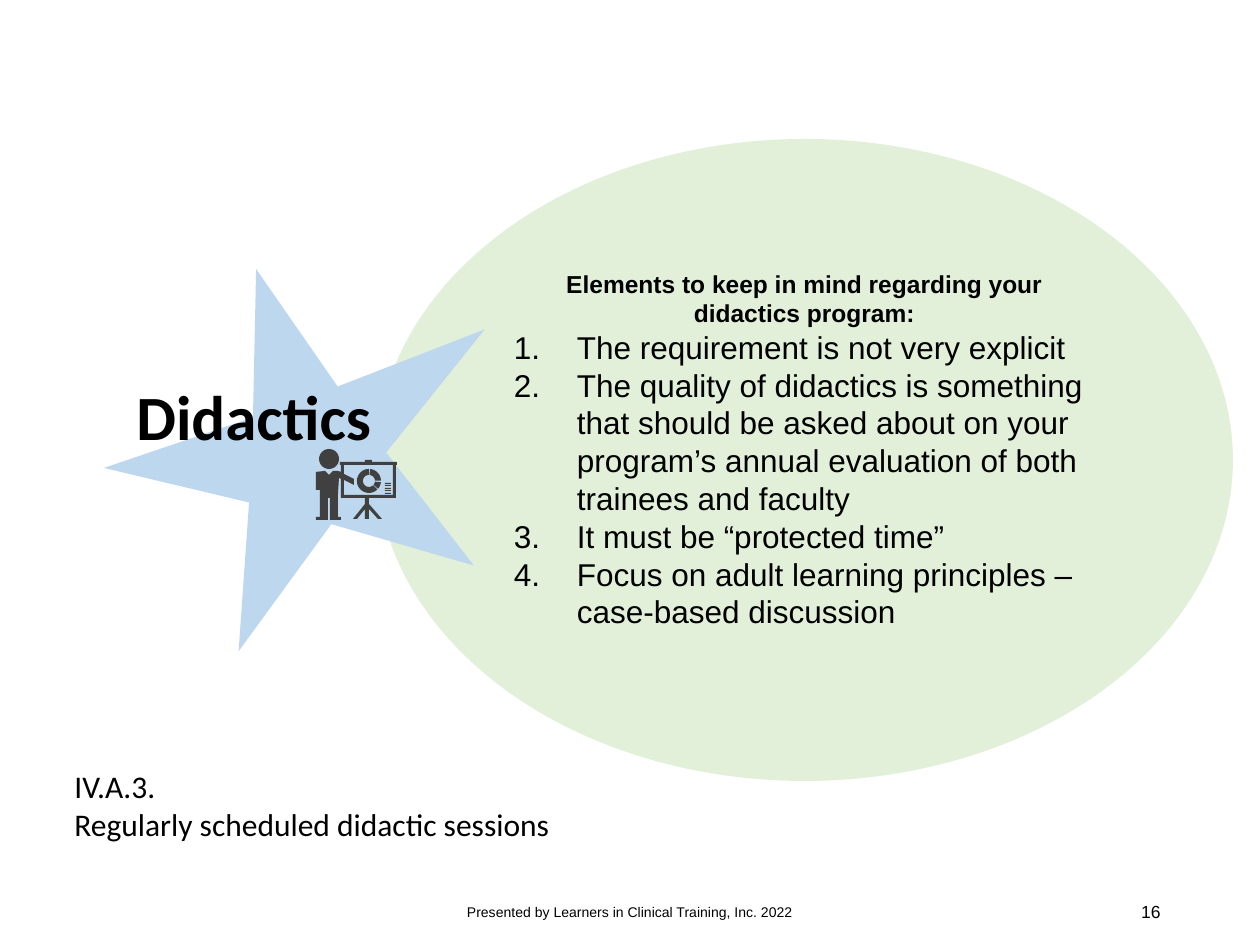
from math import cos, radians, sin

from lxml.etree import SubElement
from pptx import Presentation
from pptx.dml.color import RGBColor
from pptx.enum.shapes import MSO_SHAPE as Shape
from pptx.enum.text import MSO_ANCHOR as Anchor, MSO_AUTO_SIZE as AutoSize, PP_ALIGN as Align
from pptx.oxml.ns import qn
from pptx.util import Pt

EMU_PER_INCH, PX_PER_INCH = 914400, 126
BLACK = RGBColor(0x00, 0x00, 0x00)
PALE_GREEN = RGBColor(0xE2, 0xF0, 0xD9)
PALE_BLUE = RGBColor(0xBD, 0xD7, 0xEE)
CHARCOAL = RGBColor(0x40, 0x40, 0x40)

HEADING = "Elements to keep in mind regarding your didactics program:"
ELEMENTS = [
    "The requirement is not very explicit",
    "The quality of didactics is something that should be asked about on your "
    "program’s annual evaluation of both trainees and faculty",
    "It must be “protected time”",
    "Focus on adult learning principles – case-based discussion",
]
TEACHER_AND_EASEL = [
    (396, 462), (372, 462), (372, 460), (365, 460), (365, 462), (340, 462),
    (340, 465), (341, 465), (341, 472), (338, 471), (333, 471), (329, 475),
    (325, 471), (316, 472), (316, 490), (320, 490), (320, 517), (316, 517),
    (316, 520), (328, 520), (328, 498), (330, 498), (330, 520), (341, 520),
    (341, 517), (338, 517), (338, 494), (339, 478), (341, 479), (341, 498),
    (365, 498), (365, 504), (353, 519), (357, 519), (365, 509), (365, 519),
    (369, 519), (369, 509), (378, 519), (382, 519), (369, 504), (369, 498),
    (396, 498), (396, 465), (397, 465), (397, 462),
]
BOARD_OPENING = [
    (393, 495), (344, 495), (344, 480), (354, 485), (354, 479), (344, 474),
    (344, 465), (393, 465),
]
RING_CENTER = (369, 481)
RING_PARTS = [(45, 270), (275, 358), (6, 40)]


def px(length):
    """Turn pixels into EMU."""
    return round(length * EMU_PER_INCH / PX_PER_INCH)


def paint(shape, color):
    """Give a shape a flat fill without outline or shadow."""
    shape.shadow.inherit = False
    shape.fill.solid()
    shape.fill.fore_color.rgb = color
    shape.line.fill.background()


def add_preset(shapes, kind, bounds, color):
    """Add a flat preset shape."""
    shape = shapes.add_shape(kind, *map(px, bounds))
    paint(shape, color)
    return shape


def add_outline(shapes, contours, color):
    """Add a flat freeform made of closed contours."""
    first, *others = [[(px(x), px(y)) for x, y in contour] for contour in contours]
    builder = shapes.build_freeform(*first[0], scale=1.0)
    builder.add_line_segments(first[1:], close=True)
    for contour in others:
        builder.move_to(*contour[0])
        builder.add_line_segments(contour[1:], close=True)
    paint(builder.convert_to_shape(), color)


def arc(radius, start, end):
    """Return points along an arc around the ring center."""
    steps = 24
    angles = [radians(start + (end - start) * step / steps) for step in range(steps + 1)]
    return [(RING_CENTER[0] + radius * cos(a), RING_CENTER[1] + radius * sin(a)) for a in angles]


def write_paragraph(para, text, align=Align.LEFT, numbered=False, **font):
    """Write one styled paragraph, numbered on request."""
    para.alignment = align
    if numbered:
        props = para._p.get_or_add_pPr()
        props.set("marL", str(px(63)))
        props.set("indent", str(-px(63)))
        SubElement(props, qn("a:buFont"), typeface="+mj-lt")
        SubElement(props, qn("a:buAutoNum"), type="arabicPeriod")
    span = para.add_run()
    span.text = text
    span.font.color.rgb = BLACK
    for name, value in font.items():
        setattr(span.font, name, value)


def add_text(page, bounds, lines, frame_format, **style):
    """Add a wrapped text box with one paragraph per line."""
    frame = page.shapes.add_textbox(*map(px, bounds)).text_frame
    frame.word_wrap = True
    for name, value in frame_format.items():
        setattr(frame, name, value)
    for index, line in enumerate(lines):
        para = frame.add_paragraph() if index else frame.paragraphs[0]
        write_paragraph(para, line, **style)


def add_elements_ellipse(page):
    """Add the ellipse with its heading and numbered list."""
    ellipse = add_preset(page.shapes, Shape.OVAL, (376, 139, 857, 642), PALE_GREEN)
    frame = ellipse.text_frame
    layout = {"word_wrap": True, "vertical_anchor": Anchor.MIDDLE, "margin_bottom": px(27)}
    for name, value in layout.items():
        setattr(frame, name, value)
    write_paragraph(frame.paragraphs[0], HEADING, Align.CENTER,
                    name="Arial", size=Pt(14), bold=True)
    for element in ELEMENTS:
        write_paragraph(frame.add_paragraph(), element, numbered=True,
                        name="Arial", size=Pt(18), bold=False)


def add_star(page):
    """Add the tilted star."""
    star = add_preset(page.shapes, Shape.STAR_5_POINT, (144, 250, 368, 389), PALE_BLUE)
    star.adjustments[0] = 0.18
    star.rotation = 53.7


def add_teacher_icon(page):
    """Add the grouped icon of a teacher at an easel."""
    shapes = page.shapes.add_group_shape().shapes
    add_preset(shapes, Shape.OVAL, (319, 449, 20, 20), CHARCOAL)
    add_outline(shapes, [TEACHER_AND_EASEL, BOARD_OPENING], CHARCOAL)
    for start, end in RING_PARTS:
        add_outline(shapes, [arc(12, start, end) + arc(6, end, start)], CHARCOAL)
    for row in range(5):
        add_preset(shapes, Shape.RECTANGLE, (385, 483 + row * 5 // 2, 6, 1), CHARCOAL)


def main():
    """Build and save the slide."""
    deck = Presentation()
    deck.slide_width, deck.slide_height = px(1260), px(945)
    page = deck.slides.add_slide(deck.slide_layouts[6])
    add_elements_ellipse(page)
    add_star(page)
    growing = {"auto_size": AutoSize.SHAPE_TO_FIT_TEXT}
    centered = {"vertical_anchor": Anchor.MIDDLE}
    add_text(page, (124, 371, 315, 89), ["Didactics"], growing,
             name="Calibri", size=Pt(36), bold=True)
    add_text(page, (62, 761, 537, 89), ["IV.A.3.", "Regularly scheduled didactic sessions"],
             growing, name="Calibri", size=Pt(18))
    add_teacher_icon(page)
    add_text(page, (417, 887, 426, 50), ["Presented by Learners in Clinical Training, Inc. 2022"],
             centered, align=Align.CENTER, name="Arial", size=Pt(8))
    add_text(page, (889, 887, 284, 50), ["16"], centered,
             align=Align.RIGHT, name="Arial", size=Pt(10))
    deck.save("out.pptx")


if __name__ == "__main__":
    main()
